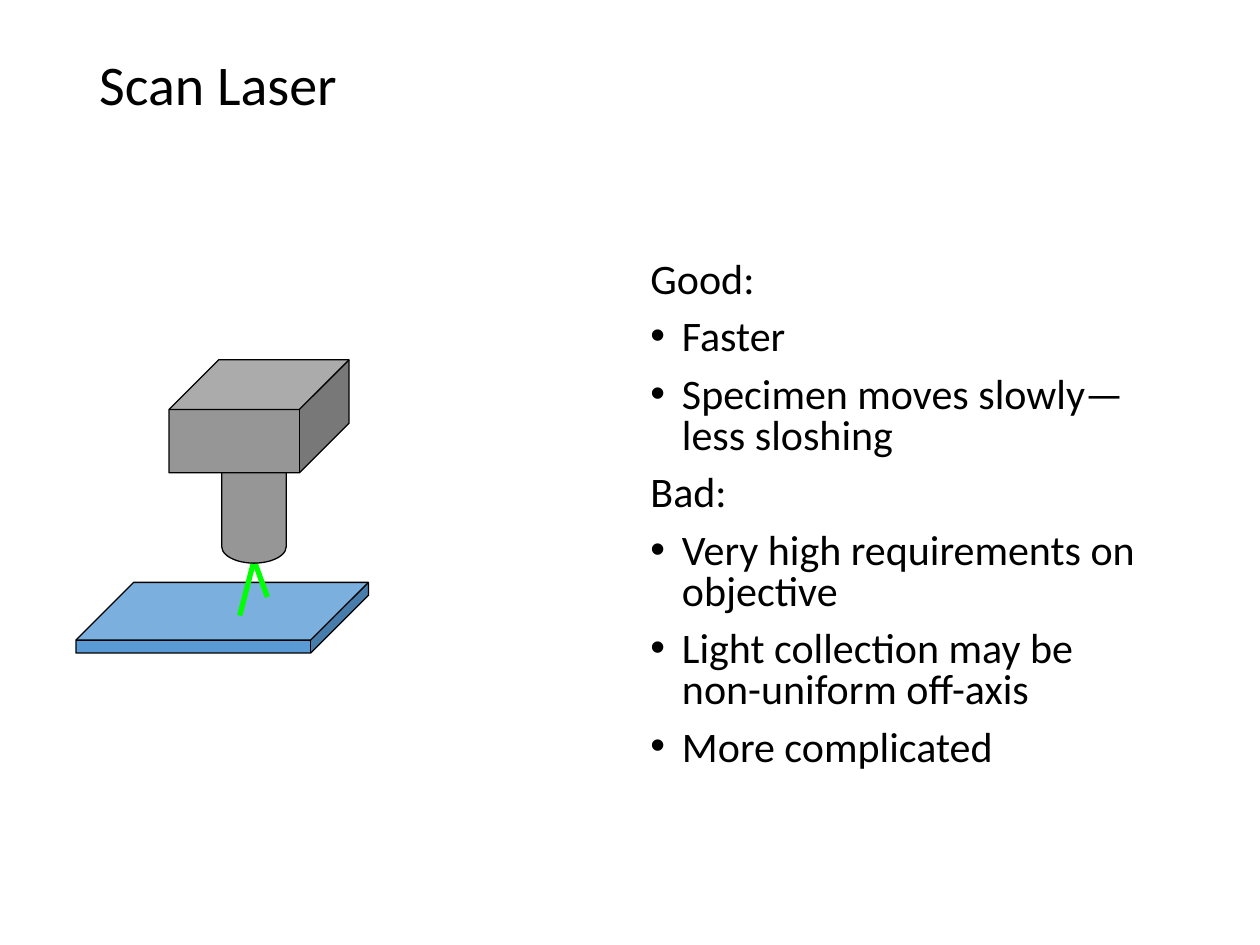
from lxml import etree
from pptx import Presentation
from pptx.dml.color import RGBColor
from pptx.enum.shapes import MSO_CONNECTOR, MSO_SHAPE
from pptx.enum.text import MSO_ANCHOR, MSO_AUTO_SIZE, PP_ALIGN
from pptx.oxml.ns import qn
from pptx.util import Pt

CUBE, CAN = MSO_SHAPE.CUBE, MSO_SHAPE.CAN
STRAIGHT = MSO_CONNECTOR.STRAIGHT
TOP, LEFT = MSO_ANCHOR.TOP, PP_ALIGN.LEFT
NO_AUTOFIT = MSO_AUTO_SIZE.NONE

FONT = "Calibri"
COLORS = {"text": "000000", "outline": "000000", "slab": "5B9BD5",
          "scanner": "969696", "laser": "00FF00"}
POINTS = [
    ("Good:", ["Faster", "Specimen moves slowly—less sloshing"]),
    ("Bad:", ["Very high requirements on objective",
              "Light collection may be non-uniform off-axis",
              "More complicated"]),
]


def color(name):
    return RGBColor.from_string(COLORS[name])


def place(placeholder, left, top, width, height):
    placeholder.left, placeholder.top = Pt(left), Pt(top)
    placeholder.width, placeholder.height = Pt(width), Pt(height)
    frame = placeholder.text_frame
    frame.word_wrap = True
    frame.auto_size = NO_AUTOFIT
    frame.vertical_anchor = TOP
    return frame


def format_paragraph(paragraph, text, size, spacing):
    paragraph.text = text
    paragraph.alignment = LEFT
    paragraph.line_spacing = spacing
    paragraph.font.name = FONT
    paragraph.font.size = Pt(size)
    paragraph.font.color.rgb = color("text")


def set_bullet(paragraph, bulleted):
    properties = paragraph._p.get_or_add_pPr()
    properties.set("marL", str(Pt(18)))
    properties.set("indent", str(-Pt(18)))
    if bulleted:
        etree.SubElement(properties, qn("a:buFont"), typeface="Arial")
        etree.SubElement(properties, qn("a:buChar"), char="•")
    else:
        etree.SubElement(properties, qn("a:buNone"))


def add_title(slide, left, top, width, height):
    frame = place(slide.shapes.title, left, top, width, height)
    format_paragraph(frame.paragraphs[0], "Scan Laser", 32, 0.9)


def add_points(slide, left, top, width, height):
    frame = place(slide.placeholders[1], left, top, width, height)
    lines = [(text, text != heading)
             for heading, items in POINTS for text in [heading, *items]]
    for index, (text, bulleted) in enumerate(lines):
        paragraph = frame.add_paragraph() if index else frame.paragraphs[0]
        format_paragraph(paragraph, text, 24, 0.8)
        paragraph.space_before = Pt(10)
        set_bullet(paragraph, bulleted)


def add_solid(shapes, kind, fill, depth, left, top, width, height):
    shape = shapes.add_shape(kind, Pt(left), Pt(top), Pt(width), Pt(height))
    shape.adjustments[0] = depth
    shape.shadow.inherit = False
    shape.fill.solid()
    shape.fill.fore_color.rgb = color(fill)
    shape.line.color.rgb = color("outline")
    shape.line.width = Pt(0.75)


def add_beam(shapes, start_x, start_y, end_x, end_y):
    beam = shapes.add_connector(STRAIGHT, Pt(start_x), Pt(start_y), Pt(end_x), Pt(end_y))
    beam.line.color.rgb = color("laser")
    beam.line.width = Pt(3)
    etree.SubElement(beam._element.spPr, qn("a:effectLst"))


def add_microscope(slide, left, top):
    shapes = slide.shapes
    # Specimen slab
    add_solid(shapes, CUBE, "slab", 0.817, left, top + 127.2, 167.2, 40.4)
    # Laser beams, crossing at the objective
    add_beam(shapes, left + 105, top + 102, left + 93.6, top + 146.2)
    add_beam(shapes, left + 97.2, top + 102, left + 109.4, top + 135.6)
    # Objective and housing
    scanner = shapes.add_group_shape().shapes
    add_solid(scanner, CAN, "scanner", 0.514, left + 83.3, top + 40.6, 36.9, 75.6)
    add_solid(scanner, CUBE, "scanner", 0.44, left + 53.2, top, 102.9, 64.6)


def main():
    presentation = Presentation()
    presentation.slide_width, presentation.slide_height = Pt(720), Pt(540)
    slide = presentation.slides.add_slide(presentation.slide_layouts[1])
    add_title(slide, 49.5, 28.75, 621, 104.4)
    add_microscope(slide, 43.4, 205.6)
    add_points(slide, 364.5, 146, 306, 342.6)
    presentation.save("out.pptx")


if __name__ == "__main__":
    main()
